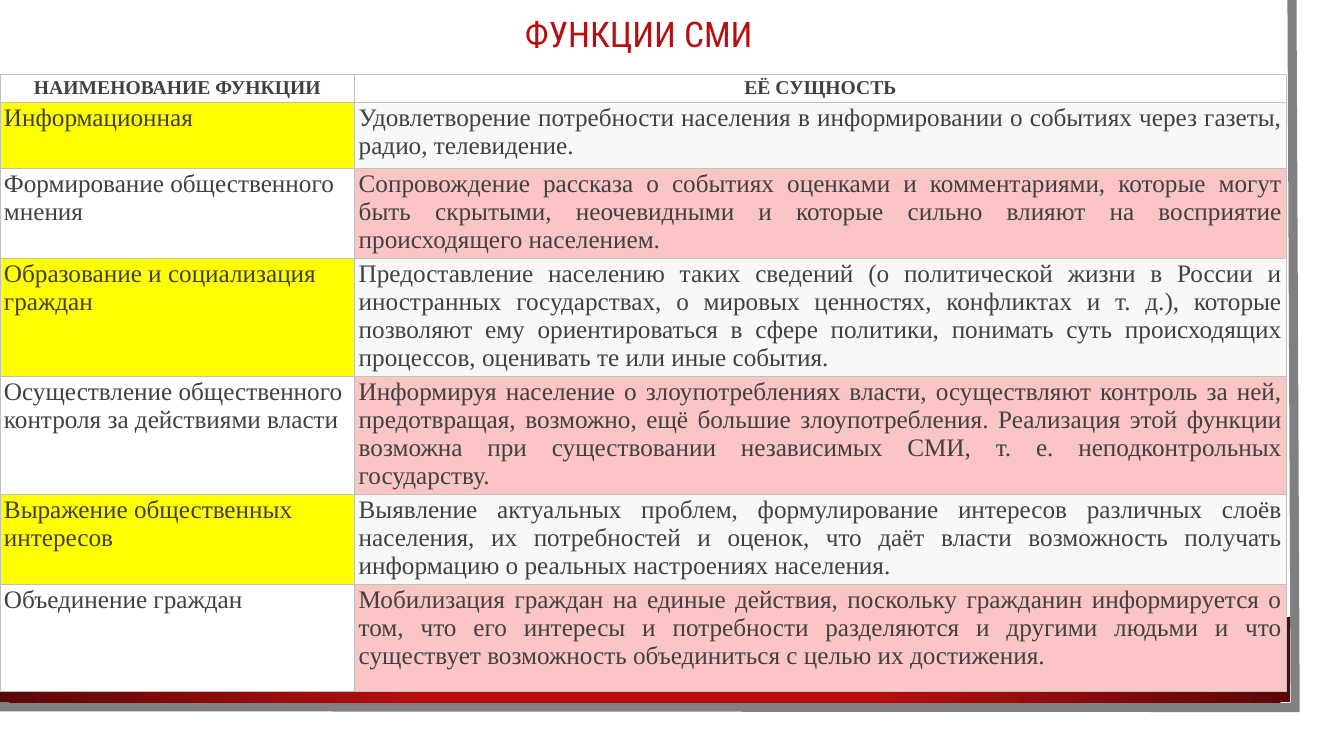
from lxml.etree import SubElement
from pptx import Presentation
from pptx.dml.color import RGBColor
from pptx.enum.shapes import MSO_SHAPE
from pptx.enum.text import MSO_ANCHOR, PP_ALIGN
from pptx.oxml import parse_xml
from pptx.oxml.ns import nsdecls, qn
from pptx.util import Cm, Pt

TITLE = "ФУНКЦИИ СМИ"
HEADER = ("НАИМЕНОВАНИЕ ФУНКЦИИ", "ЕЁ СУЩНОСТЬ")
FUNCTIONS = [
    ("Информационная",
     "Удовлетворение потребности населения в информировании о событиях через "
     "газеты, радио, телевидение."),
    ("Формирование общественного мнения",
     "Сопровождение рассказа о событиях оценками и комментариями, которые могут "
     "быть скрытыми, неочевидными и которые сильно влияют на восприятие "
     "происходящего населением."),
    ("Образование и социализация граждан",
     "Предоставление населению таких сведений (о политической жизни в России и "
     "иностранных государствах, о мировых ценностях, конфликтах и т. д.), которые "
     "позволяют ему ориентироваться в сфере политики, понимать суть происходящих "
     "процессов, оценивать те или иные события."),
    ("Осуществление общественного контроля за действиями власти",
     "Информируя население о злоупотреблениях власти, осуществляют контроль за "
     "ней, предотвращая, возможно, ещё большие злоупотребления. Реализация этой "
     "функции возможна при существовании независимых СМИ, т. е. неподконтрольных "
     "государству."),
    ("Выражение общественных интересов",
     "Выявление актуальных проблем, формулирование интересов различных слоёв "
     "населения, их потребностей и оценок, что даёт власти возможность получать "
     "информацию о реальных настроениях населения."),
    ("Объединение граждан",
     "Мобилизация граждан на единые действия, поскольку гражданин информируется о "
     "том, что его интересы и потребности разделяются и другими людьми и что "
     "существует возможность объединиться с целью их достижения."),
]
COL_WIDTHS = (8.94, 23.47)
ROW_HEIGHTS = (0.7, 1.66, 2.27, 2.97, 2.97, 2.27, 2.7)
FRAME = [(32.56, 0), (32.64, 17.83), (-0.08, 17.81)]
COLORS = {
    "white": "FFFFFF", "red": "B80E0F", "dark_red": "5C0707", "frame": "808080",
    "text": "404040", "border": "C0C0C0", "yellow": "FFFF00",
    "gray": "F8F8F8", "pink": "FBC5C5",
}
ROW_FILLS = (("yellow", "gray"), ("white", "pink"))


def rgb(name):
    return RGBColor.from_string(COLORS[name])


def add_rect(s, left, top, width, height):
    sp = s.shapes.add_shape(MSO_SHAPE.RECTANGLE, Cm(left), Cm(top), Cm(width), Cm(height))
    sp.shadow.inherit = False
    sp.line.fill.background()
    return sp


def add_backdrop(s):
    """Draw the white sheet, its grey edge and the red band at the bottom."""
    sheet = add_rect(s, 0, 0, 33.27, 18.47)
    sheet.fill.solid()
    sheet.fill.fore_color.rgb = rgb("white")

    points = [(Cm(x), Cm(y)) for x, y in FRAME]
    builder = s.shapes.build_freeform(*points[0])
    builder.add_line_segments(points[1:], close=False)
    edge = builder.convert_to_shape()
    edge.shadow.inherit = False
    edge.fill.background()
    edge.line.color.rgb = rgb("frame")
    edge.line.width = Pt(6.5)
    SubElement(edge.line._get_or_add_ln(), qn("a:miter"), lim="800000")

    band = add_rect(s, 0, 15.54, 32.51, 2.16)
    band.fill.gradient()
    stops = zip(band.fill.gradient_stops, ((0.34, "red"), (1, "dark_red")))
    for stop, (position, color) in stops:
        stop.position = position
        stop.color.rgb = rgb(color)
    grad = band.element.spPr.find(qn("a:gradFill"))
    grad.replace(grad.find(qn("a:lin")), parse_xml(
        f'<a:path {nsdecls("a")} path="circle">'
        '<a:fillToRect l="50000" t="50000" r="50000" b="50000"/></a:path>'))


def add_title(s):
    title = s.shapes.title
    title.element.getparent().append(title.element)  # in front of the backdrop
    title.left, title.top, title.width, title.height = Cm(1.57), Cm(0.36), Cm(29.06), Cm(1.12)
    tf = title.text_frame
    tf.text = TITLE
    tf.vertical_anchor = MSO_ANCHOR.MIDDLE
    p = tf.paragraphs[0]
    p.alignment = PP_ALIGN.CENTER
    p.line_spacing = 0.9
    p.font.name = "Roboto Condensed"
    p.font.size = Pt(25.2)
    p.font.color.rgb = rgb("red")


def format_cell(cell, text, fill, size, bold, align, anchor):
    cell.text = text
    cell.vertical_anchor = anchor
    cell.margin_left = cell.margin_right = cell.margin_bottom = Cm(0.1)
    cell.margin_top = Cm(0.05)
    cell.fill.solid()
    cell.fill.fore_color.rgb = rgb(fill)
    p = cell.text_frame.paragraphs[0]
    p.alignment = align
    font = p.runs[0].font
    font.name, font.size, font.bold = "Times New Roman", Pt(size), bold
    font.color.rgb = rgb("text")
    tc_pr = cell._tc.get_or_add_tcPr()
    for i, side in enumerate(("lnL", "lnR", "lnT", "lnB")):
        tc_pr.insert(i, parse_xml(
            f'<a:{side} {nsdecls("a")} w="{Pt(0.75)}"><a:solidFill>'
            f'<a:srgbClr val="{COLORS["border"]}"/></a:solidFill></a:{side}>'))


def add_functions_table(s):
    rows = [HEADER] + FUNCTIONS
    table = s.shapes.add_table(len(rows), len(HEADER), Cm(0), Cm(1.88),
                               Cm(sum(COL_WIDTHS)), Cm(sum(ROW_HEIGHTS))).table
    table.first_row = table.horz_banding = False
    for column, width in zip(table.columns, COL_WIDTHS):
        column.width = Cm(width)
    for r, (row, height) in enumerate(zip(table.rows, ROW_HEIGHTS)):
        row.height = Cm(height)
        for c, text in enumerate(rows[r]):
            if r == 0:
                style = ("white", 14, True, PP_ALIGN.CENTER, MSO_ANCHOR.MIDDLE)
            else:
                align = (PP_ALIGN.LEFT, PP_ALIGN.JUSTIFY)[c]
                style = (ROW_FILLS[(r - 1) % 2][c], 18, False, align, MSO_ANCHOR.TOP)
            format_cell(table.cell(r, c), text, *style)


def main():
    prs = Presentation()
    prs.slide_width, prs.slide_height = Cm(33.87), Cm(19.05)
    s = prs.slides.add_slide(prs.slide_layouts[5])
    add_backdrop(s)
    add_title(s)
    add_functions_table(s)
    prs.save("out.pptx")


if __name__ == "__main__":
    main()
